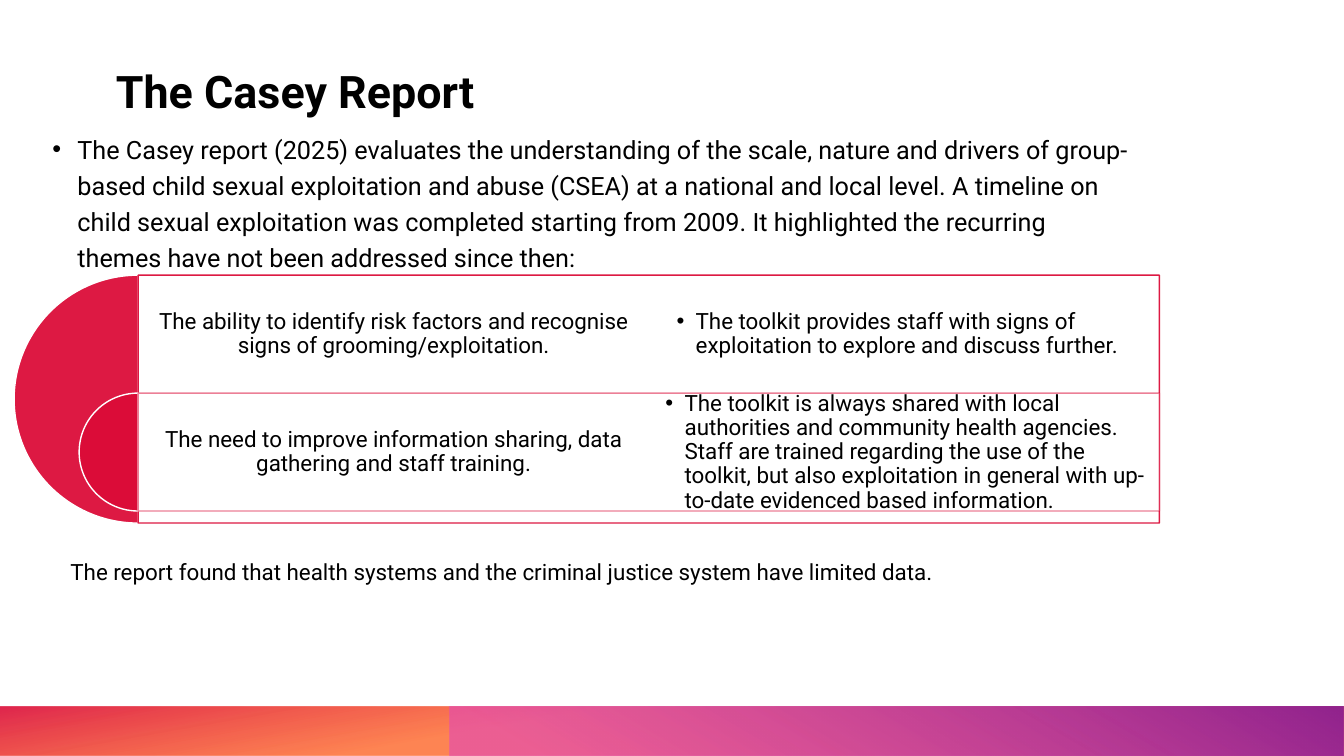
from dataclasses import dataclass

from lxml.etree import SubElement
from pptx import Presentation
from pptx.dml.color import RGBColor
from pptx.enum.shapes import MSO_SHAPE as Preset
from pptx.enum.text import MSO_ANCHOR as Anchor, MSO_AUTO_SIZE as AutoSize, PP_ALIGN as Align
from pptx.oxml.ns import qn
from pptx.util import Inches, Pt


@dataclass(frozen=True)
class Theme:
    font: str = "Roboto"
    title_size: int = 32
    body_size: int = 18
    small_size: int = 16
    ink: str = "000000"
    white: str = "FFFFFF"
    red: str = "DA002F"
    orange: str = "FE4A00"
    pink: str = "E349BB"
    purple: str = "92248E"


theme = Theme()


def set_color(fill, value, opacity=100):
    """Give a solid fill its colour and opacity in percent."""
    fill.solid()
    fill.fore_color.rgb = RGBColor.from_string(value)
    color = fill._xPr.find(".//" + qn("a:srgbClr"))
    SubElement(color, qn("a:alpha"), val=str(opacity * 1000))


def write(shape, text, size, anchor=Anchor.TOP, align=Align.LEFT, spacing=None,
          inset=None, indent=None, bold=False):
    """Write one paragraph; an indent in inches makes it a bullet."""
    frame = shape.text_frame
    frame.text = text
    frame.word_wrap = True
    frame.auto_size = AutoSize.NONE
    frame.vertical_anchor = anchor
    if inset is not None:
        frame.margin_left = frame.margin_right = Inches(inset)
        frame.margin_top = frame.margin_bottom = Inches(inset)
    para = frame.paragraphs[0]
    para.alignment = align
    para.line_spacing = spacing
    if indent:
        properties = para._p.get_or_add_pPr()
        properties.set("marL", str(Inches(indent)))
        properties.set("indent", str(Inches(-indent)))
        SubElement(properties, qn("a:buFont"), typeface="Arial")
        SubElement(properties, qn("a:buChar"), char="•")
    font = para.runs[0].font
    font.name, font.size, font.bold = theme.font, Pt(size), bold
    font.color.rgb = RGBColor.from_string(theme.ink)
    return para


deck = Presentation()
deck.slide_width, deck.slide_height = Inches(13.33), Inches(7.5)
page = deck.slides.add_slide(deck.slide_layouts[5])
shapes = page.shapes

# Gradient band along the foot: stops are position, colour, opacity
bands = [
    (0, 180, 100, [(62, theme.orange, 67), (100, theme.red, 85)]),
    (4.46, 0, 240, [(9, theme.pink, 62), (99, theme.purple, 100)]),
]
for left, rotation, angle, stops in bands:
    band = shapes.add_shape(Preset.RECTANGLE, Inches(left), Inches(7.01),
                            Inches(13.33 - left), Inches(0.49))
    band.shadow.inherit = False
    band.rotation = rotation
    band._element.spPr.find(qn("a:xfrm")).set("flipH", "1")
    band.line.fill.background()
    band.fill.gradient()
    band.fill.gradient_angle = 360 - angle
    for stop, (position, color, opacity) in zip(band.fill.gradient_stops, stops):
        stop.position = position / 100
        stop.color.rgb = RGBColor.from_string(color)
        SubElement(stop._gs.find(qn("a:srgbClr")), qn("a:alpha"), val=str(opacity * 1000))

# Title
title = shapes.title
title.left, title.top = Inches(1.05), Inches(0.17)
title.width, title.height = Inches(10.92), Inches(1.05)
write(title, "The Casey Report", theme.title_size, Anchor.BOTTOM, spacing=0.9, bold=True)

# Introduction
intro = shapes.add_textbox(Inches(0.42), Inches(1.22), Inches(10.92), Inches(5))
para = write(
    intro,
    "The Casey report (2025) evaluates the understanding of the scale, nature and drivers of "
    "group-based child sexual exploitation and abuse (CSEA) at a national and local level. "
    "A timeline on child sexual exploitation was completed starting from 2009. It highlighted "
    "the recurring themes have not been addressed since then:",
    theme.body_size, spacing=1.2, indent=0.25)
para.space_before = Pt(10)

# Nested half discs, each with its row: finding on the left, response on the right
panel_left, panel_top, row_height, column = 1.37, 2.73, 1.17, 5.07
rows = [
    (2.46, 90, "The ability to identify risk factors and recognise signs of grooming/exploitation.",
     "The toolkit provides staff with signs of exploitation to explore and discuss further.",
     (6.44, 2.73, 5.07, 1.17)),
    (1.17, 50, "The need to improve information sharing, data gathering and staff training.",
     "The toolkit is always shared with local authorities and community health agencies. "
     "Staff are trained regarding the use of the toolkit, but also exploitation in general "
     "with up-to-date evidenced based information.",
     (6.33, 3.72, 5.29, 1.54)),
]
for number, (diameter, opacity, finding, response, response_area) in enumerate(rows):
    top = panel_top + number * row_height
    disc = shapes.add_shape(Preset.PIE, Inches(panel_left - diameter / 2), Inches(top),
                            Inches(diameter), Inches(diameter))
    disc.adjustments[0], disc.adjustments[1] = 54, 162
    set_color(disc.fill, theme.red, opacity)
    set_color(disc.line.fill, theme.white)

    panel = shapes.add_shape(Preset.RECTANGLE, Inches(panel_left), Inches(top),
                             Inches(10.13), Inches(diameter))
    set_color(panel.fill, theme.white, 90)
    set_color(panel.line.fill, theme.red, opacity)
    for shape in (disc, panel):
        shape.shadow.inherit = False
        shape.line.width = Pt(1)

    box = shapes.add_textbox(Inches(panel_left), Inches(top), Inches(column), Inches(row_height))
    write(box, finding, theme.small_size, Anchor.MIDDLE, Align.CENTER, 0.9, inset=0.07)
    box = shapes.add_textbox(*map(Inches, response_area))
    write(box, response, theme.small_size, Anchor.MIDDLE, spacing=0.9, inset=0.27, indent=0.19)

# Closing remark
closing = shapes.add_textbox(Inches(0.6), Inches(5.49), Inches(12.32), Inches(0.37))
write(closing, "The report found that health systems and the criminal justice system have limited data.",
      theme.small_size)

deck.save("out.pptx")
